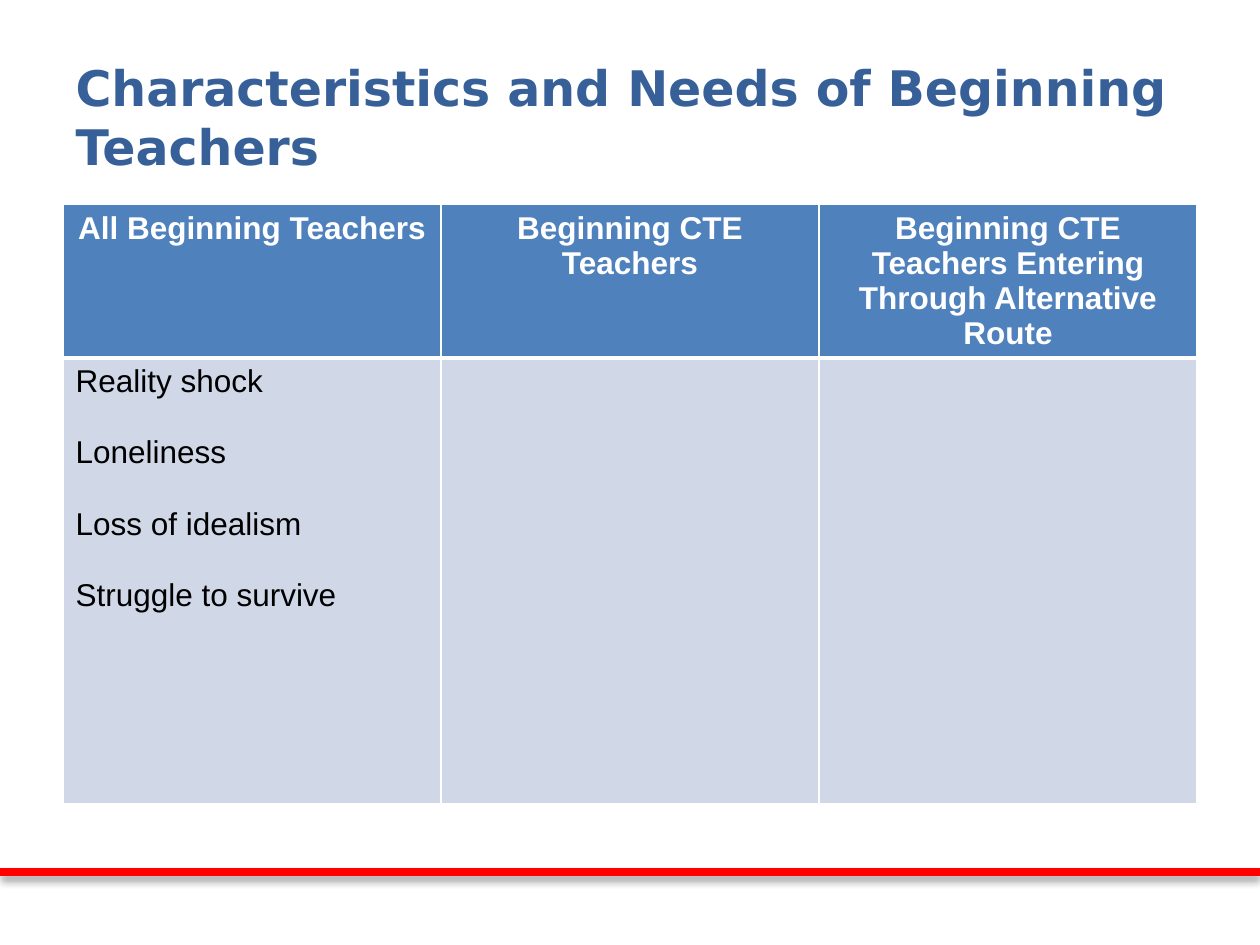
from lxml.etree import SubElement
from pptx import Presentation
from pptx.dml.color import RGBColor
from pptx.enum.shapes import MSO_CONNECTOR
from pptx.enum.text import MSO_ANCHOR, PP_ALIGN
from pptx.oxml import parse_xml
from pptx.oxml.ns import nsdecls, qn
from pptx.util import Inches, Pt

TITLE_BLUE = RGBColor(0x37, 0x60, 0x98)
HEADER_BLUE = RGBColor(0x4F, 0x81, 0xBD)
BODY_BLUE = RGBColor(0xD0, 0xD8, 0xE8)
WHITE = RGBColor(0xFF, 0xFF, 0xFF)
BLACK = RGBColor(0, 0, 0)
RED = RGBColor(0xFF, 0, 0)

MARGIN = Inches(0.5)
COLUMN_WIDTH = Inches(3)
ROW_HEIGHTS = [Inches(1.21), Inches(3.54)]
HEADERS = [
    "All Beginning Teachers",
    "Beginning CTE Teachers",
    "Beginning CTE Teachers Entering Through Alternative Route",
]
NEEDS = ["Reality shock", "Loneliness", "Loss of idealism", "Struggle to survive"]


def style_font(font, name, size, color, bold):
    font.name = name
    font.size = Pt(size)
    font.color.rgb = color
    font.bold = bold


def add_borders(cell, widths):
    properties = cell._tc.get_or_add_tcPr()
    for index, (side, width) in enumerate(zip("LRTB", widths)):
        properties.insert(index, parse_xml(
            f'<a:ln{side} {nsdecls("a")} w="{Pt(width)}"><a:solidFill>'
            f'<a:srgbClr val="{WHITE}"/></a:solidFill></a:ln{side}>'))


presentation = Presentation()
presentation.slide_width = Inches(10)
presentation.slide_height = Inches(7.5)
slide = presentation.slides.add_slide(presentation.slide_layouts[5])

# Red footer rule with a soft shadow below it
rule_top = Inches(6.92)
rule = slide.shapes.add_connector(
    MSO_CONNECTOR.STRAIGHT, 0, rule_top, presentation.slide_width, rule_top)
rule.line.color.rgb = RED
rule.line.width = Pt(5)
effects = SubElement(rule._element.spPr, qn("a:effectLst"))
effects.append(parse_xml(
    f'<a:outerShdw {nsdecls("a")} blurRad="{Pt(4)}" dist="{Pt(3)}" dir="5400000" '
    'rotWithShape="0"><a:srgbClr val="000000"><a:alpha val="35000"/>'
    '</a:srgbClr></a:outerShdw>'))

# Title
title = slide.shapes.title
title.left, title.top = MARGIN, Inches(0.3)
title.width, title.height = 3 * COLUMN_WIDTH, Inches(1.25)
title.text_frame.text = "Characteristics and Needs of Beginning Teachers"
title.text_frame.vertical_anchor = MSO_ANCHOR.MIDDLE
title_paragraph = title.text_frame.paragraphs[0]
title_paragraph.alignment = PP_ALIGN.LEFT
style_font(title_paragraph.runs[0].font, "DejaVu Sans", 28, TITLE_BLUE, True)

# Table: one header row above one tall body row
table = slide.shapes.add_table(
    2, len(HEADERS), MARGIN, Inches(1.62), 3 * COLUMN_WIDTH, sum(ROW_HEIGHTS)).table
for row, height in zip(table.rows, ROW_HEIGHTS):
    row.height = height

for column, header in enumerate(HEADERS):
    table.columns[column].width = COLUMN_WIDTH
    header_cell, body_cell = table.cell(0, column), table.cell(1, column)
    for cell, fill, widths in (
        (header_cell, HEADER_BLUE, (1, 1, 1, 3)),
        (body_cell, BODY_BLUE, (1, 1, 3, 1)),
    ):
        cell.fill.solid()
        cell.fill.fore_color.rgb = fill
        add_borders(cell, widths)
    header_cell.text_frame.text = header
    paragraph = header_cell.text_frame.paragraphs[0]
    paragraph.alignment = PP_ALIGN.CENTER
    style_font(paragraph.runs[0].font, "Arial", 18, WHITE, True)

# Needs listed in the first column
needs_frame = table.cell(1, 0).text_frame
needs_frame.text = "\n".join(NEEDS)
for index, paragraph in enumerate(needs_frame.paragraphs):
    if index:
        paragraph.space_before = Pt(20.5)
    style_font(paragraph.runs[0].font, "Arial", 18, BLACK, False)

presentation.save("out.pptx")
